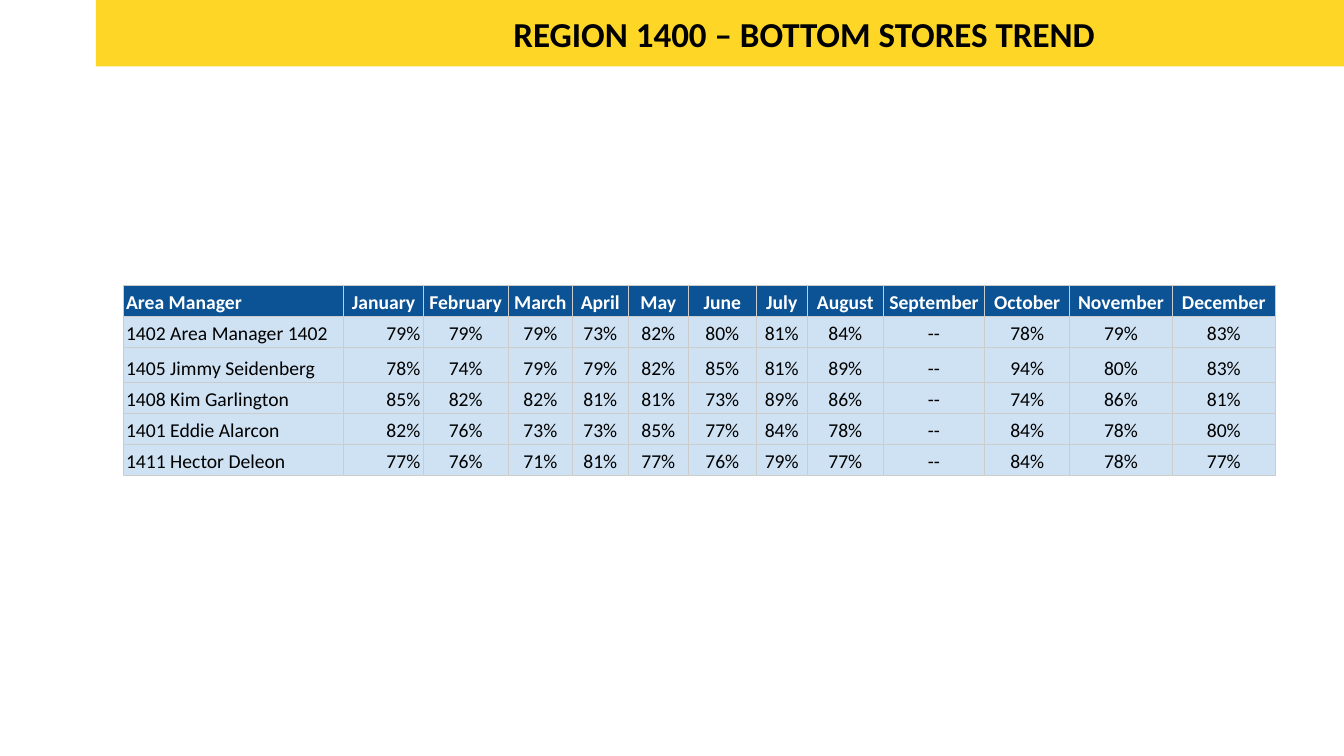
from lxml import etree
from pptx import Presentation
from pptx.dml.color import RGBColor
from pptx.enum.shapes import MSO_SHAPE
from pptx.enum.text import MSO_ANCHOR, PP_ALIGN
from pptx.oxml.ns import qn
from pptx.util import Inches, Pt

RECTANGLE = MSO_SHAPE.RECTANGLE
BOTTOM = MSO_ANCHOR.BOTTOM
LEFT, CENTER, RIGHT = PP_ALIGN.LEFT, PP_ALIGN.CENTER, PP_ALIGN.RIGHT

FONT = "Calibri"
YELLOW, BLUE, PALE_BLUE = "FED726", "0B5394", "CFE2F3"
BLACK, WHITE, GREY = "000000", "FFFFFF", "CCCCCC"

COLUMN_WIDTHS = [2.19, 0.79, 0.84, 0.64, 0.55, 0.6, 0.67, 0.51, 0.75, 1.01, 0.84, 1.02, 1.02]
ROW_HEIGHTS = [0.28, 0.28, 0.35, 0.27, 0.28, 0.28]
HEADER = ["Area Manager", "January", "February", "March", "April", "May", "June",
          "July", "August", "September", "October", "November", "December"]
SCORES = {
    "1402 Area Manager 1402": "79% 79% 79% 73% 82% 80% 81% 84% -- 78% 79% 83%",
    "1405 Jimmy Seidenberg": "78% 74% 79% 79% 82% 85% 81% 89% -- 94% 80% 83%",
    "1408 Kim Garlington": "85% 82% 82% 81% 81% 73% 89% 86% -- 74% 86% 81%",
    "1401 Eddie Alarcon": "82% 76% 73% 73% 85% 77% 84% 78% -- 84% 78% 80%",
    "1411 Hector Deleon": "77% 76% 71% 81% 77% 76% 79% 77% -- 84% 78% 77%",
}


def rgb(color):
    return RGBColor.from_string(color)


def add_run(paragraph, text, size, color, bold):
    run = paragraph.add_run()
    run.text = text
    run.font.name = FONT
    run.font.size = Pt(size)
    run.font.bold = bold
    run.font.color.rgb = rgb(color)


def add_banner(slide):
    banner = slide.shapes.add_shape(
        RECTANGLE, Inches(0.95), Inches(0), Inches(12.38), Inches(0.66))
    banner.shadow.inherit = False
    banner.fill.solid()
    banner.fill.fore_color.rgb = rgb(YELLOW)
    banner.line.fill.background()


def add_title(slide, text):
    title = slide.shapes.add_textbox(
        Inches(2.61), Inches(0.07), Inches(10.73), Inches(0.52))
    title.text_frame.word_wrap = True
    paragraph = title.text_frame.paragraphs[0]
    paragraph.alignment = CENTER
    add_run(paragraph, text, 25, BLACK, True)


def add_borders(cell):
    """Draw all four cell borders; call before the fill, which must follow them in the XML."""
    properties = cell._tc.get_or_add_tcPr()
    for side in ("a:lnL", "a:lnR", "a:lnT", "a:lnB"):
        line = etree.SubElement(properties, qn(side), w=str(Pt(0.75)))
        fill = etree.SubElement(line, qn("a:solidFill"))
        etree.SubElement(fill, qn("a:srgbClr"), val=GREY)


def fill_cell(cell, text, alignment, is_header):
    add_borders(cell)
    cell.fill.solid()
    cell.fill.fore_color.rgb = rgb(BLUE if is_header else PALE_BLUE)
    cell.vertical_anchor = BOTTOM
    cell.margin_left = cell.margin_right = Inches(0.03)
    cell.margin_top = cell.margin_bottom = Inches(0.02)
    paragraph = cell.text_frame.paragraphs[0]
    paragraph.alignment = alignment
    paragraph.line_spacing = 1.15
    add_run(paragraph, text, 14, WHITE if is_header else BLACK, is_header)


def cell_alignment(row, column):
    if column == 0:
        return LEFT
    return RIGHT if column == 1 and row > 0 else CENTER


def add_scores_table(slide):
    rows = [HEADER] + [[manager, *scores.split()] for manager, scores in SCORES.items()]
    table = slide.shapes.add_table(
        len(rows), len(HEADER), Inches(1.22), Inches(2.83),
        Inches(sum(COLUMN_WIDTHS)), Inches(sum(ROW_HEIGHTS))).table
    for column, width in zip(table.columns, COLUMN_WIDTHS):
        column.width = Inches(width)
    for row, height in zip(table.rows, ROW_HEIGHTS):
        row.height = Inches(height)
    for row_index, texts in enumerate(rows):
        for column_index, text in enumerate(texts):
            fill_cell(table.cell(row_index, column_index), text,
                      cell_alignment(row_index, column_index), row_index == 0)


def main():
    presentation = Presentation()
    presentation.slide_width = Inches(13.33)
    presentation.slide_height = Inches(7.5)
    slide = presentation.slides.add_slide(presentation.slide_layouts[6])
    add_banner(slide)
    add_title(slide, "REGION 1400 – BOTTOM STORES TREND")
    add_scores_table(slide)
    presentation.save("out.pptx")


if __name__ == "__main__":
    main()
